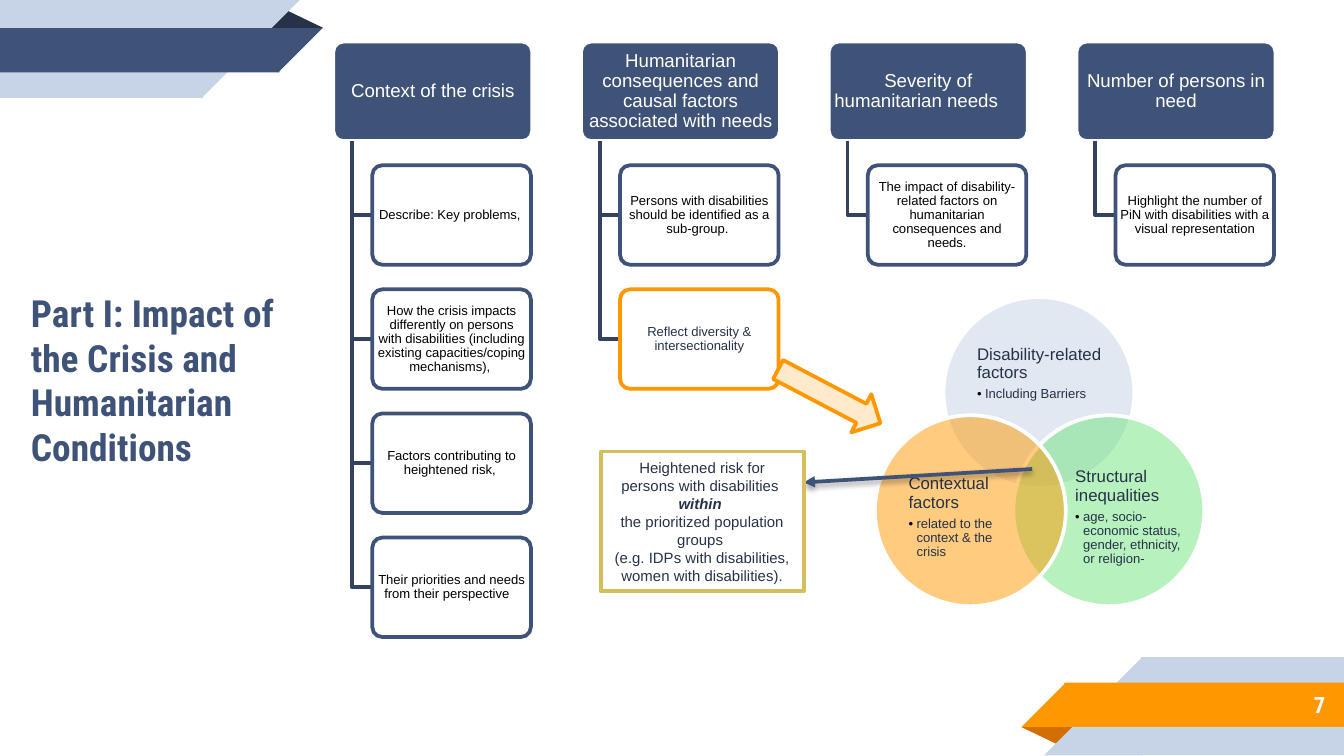
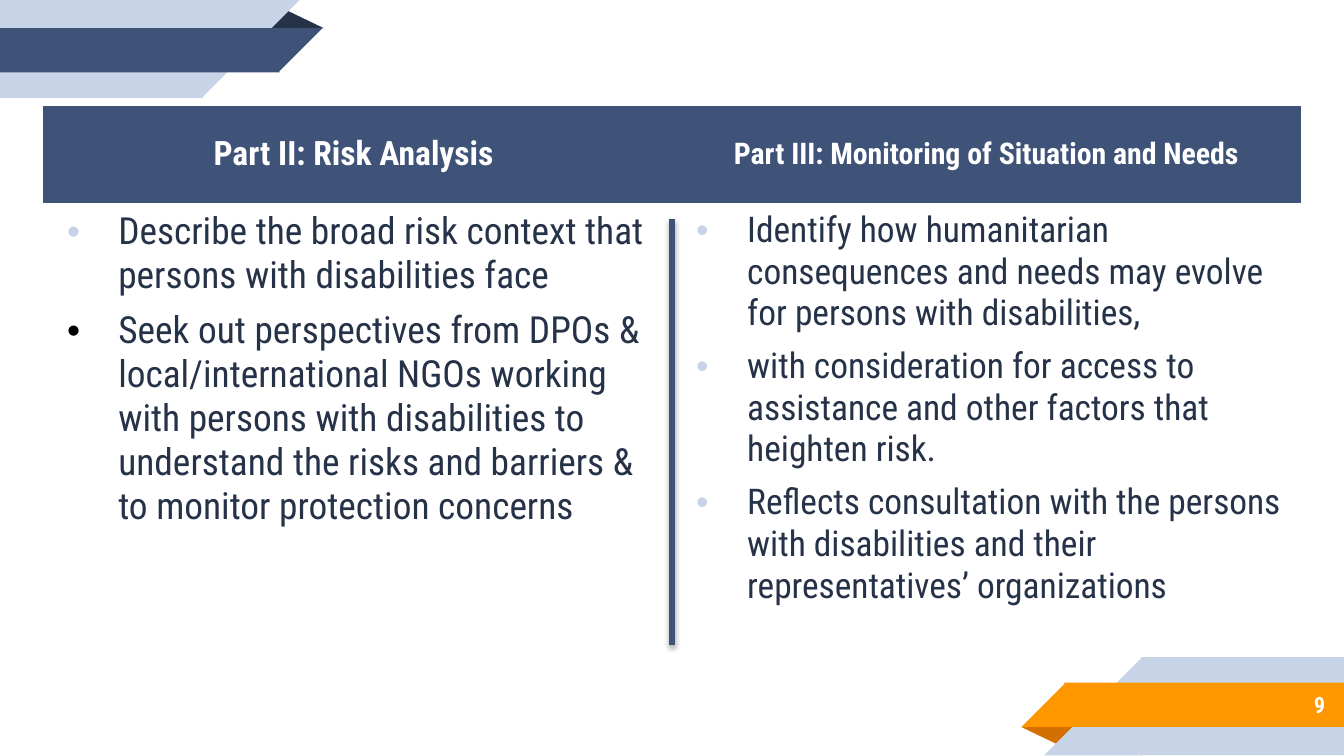
import lxml.etree
import pptx
import pptx.dml.color
import pptx.enum.shapes
import pptx.enum.text
import pptx.oxml.ns
import pptx.util

Inches = pptx.util.Inches
Pt = pptx.util.Pt
qn = pptx.oxml.ns.qn
SHAPE = pptx.enum.shapes.MSO_SHAPE
ALIGN = pptx.enum.text.PP_ALIGN
ANCHOR = pptx.enum.text.MSO_ANCHOR

NAVY, INK, LINK = "3F5378", "263248", "324260"
PALE, ORANGE, RUST = "C7D3E6", "FF9800", "D26F00"
WHITE, BLACK = "FFFFFF", "000000"
HEAD, BODY = "Roboto Condensed", "Arial"
PLAIN_TABLE = "{2D5ABB26-0587-4C30-8999-92F81FD0307C}"
TITLE_ONLY, BLANK = 5, 6


def rgb(color):
    return pptx.dml.color.RGBColor.from_string(color)


def add(parent, tag, **attrs):
    return lxml.etree.SubElement(parent, qn(tag), attrs)


class Deck:
    def __init__(self):
        self.prs = pptx.Presentation()
        self.prs.slide_width = Inches(10)
        self.prs.slide_height = Inches(10 * 9 / 16)
        self.s = None

    def slide(self, layout, number):
        self.s = self.prs.slides.add_slide(self.prs.slide_layouts[layout])
        self.shape(SHAPE.ISOSCELES_TRIANGLE, 1.98, 0.07, 0.43, 0.14, INK, adj=0.324)
        self.ribbon(0, 1.5, 0.73, PALE)
        self.ribbon(0.21, 2.07, 0.33, NAVY)
        sp = self.shape(SHAPE.ISOSCELES_TRIANGLE, 7.6, 5.41, 0.43, 0.14, RUST, adj=0.324)
        sp.rotation = 180
        self.ribbon(4.89, 1.5, 0.73, PALE, right=True)
        self.ribbon(5.08, 2.07, 0.33, ORANGE, right=True)
        tf = self.text(8.33, 5.07, 1.63, 0.35, 0.1)
        self.para(tf, number, 12, WHITE, HEAD, bold=True, align=ALIGN.RIGHT)

    def ribbon(self, y, w, h, color, right=False):
        overlap = 0.01
        self.shape(SHAPE.RECTANGLE, 10 - w - overlap if right else 0, y, w + overlap, h, color)
        sp = self.shape(SHAPE.RIGHT_TRIANGLE, 10 - w - h if right else w, y, h, h, color)
        sp.element.spPr.xfrm.set("flipH" if right else "flipV", "1")

    def paint(self, sp, fill=None, line=None, width=2, alpha=None):
        sp.shadow.inherit = False
        if fill:
            sp.fill.solid()
            sp.fill.fore_color.rgb = rgb(fill)
            if alpha:
                clr = sp.element.spPr.find(".//" + qn("a:srgbClr"))
                add(clr, "a:alpha", val=str(alpha * 1000))
        else:
            sp.fill.background()
        if line:
            sp.line.color.rgb = rgb(line)
            sp.line.width = Pt(width)
        else:
            sp.line.fill.background()

    def shape(self, kind, x, y, w, h, fill=None, line=None, alpha=None, adj=None):
        sp = self.s.shapes.add_shape(kind, Inches(x), Inches(y), Inches(w), Inches(h))
        if adj is not None:
            sp.adjustments[0] = adj
        self.paint(sp, fill, line, alpha=alpha)
        return sp

    def frame(self, tf, inset_x, inset_y):
        tf.word_wrap = True
        tf.auto_size = pptx.enum.text.MSO_AUTO_SIZE.NONE
        tf.vertical_anchor = ANCHOR.MIDDLE
        tf.margin_left = tf.margin_right = Inches(inset_x)
        tf.margin_top = tf.margin_bottom = Inches(inset_y)
        return tf

    def text(self, x, y, w, h, inset=0.0):
        sp = self.s.shapes.add_textbox(Inches(x), Inches(y), Inches(w), Inches(h))
        return self.frame(sp.text_frame, inset, inset)

    def title(self, text, x, y, w, h):
        sp = self.s.shapes.title
        sp.left, sp.top, sp.width, sp.height = map(Inches, (x, y, w, h))
        self.para(self.frame(sp.text_frame, 0.1, 0.1), text, 20, NAVY, HEAD, bold=True)

    def para(self, tf, text, size, color, font=BODY, bold=False, italic=False,
             align=ALIGN.LEFT, spacing=None, before=0, after=0, bullet=None,
             indent=0.0, hang=0.0):
        p = tf.add_paragraph() if tf.paragraphs[0].runs else tf.paragraphs[0]
        p.alignment = align
        p.space_before, p.space_after = Pt(before), Pt(after)
        if spacing:
            p.line_spacing = spacing
        if bullet:
            pr = p._p.get_or_add_pPr()
            pr.set("marL", str(Inches(indent)))
            pr.set("indent", str(-Inches(hang)))
            add(add(pr, "a:buClr"), "a:srgbClr", val=bullet)
            add(pr, "a:buFont", typeface=BODY)
            add(pr, "a:buChar", char="•")
        r = p.add_run()
        r.text = text
        r.font.name, r.font.size = font, Pt(size)
        r.font.bold, r.font.italic = bold, italic
        r.font.color.rgb = rgb(color)

    def box(self, text, x, y, w, h, size, color, fill, line, alpha=None):
        sp = self.shape(SHAPE.ROUNDED_RECTANGLE, x, y, w, h, fill, line, alpha, 0.1)
        tf = self.frame(sp.text_frame, 0.02 if size > 7 else 0.01, 0.01)
        self.para(tf, text, size, color, align=ALIGN.CENTER, spacing=0.9)

    def elbow(self, x, y, x2, y2):
        fb = self.s.shapes.build_freeform(Inches(x), Inches(y))
        fb.add_line_segments([(Inches(x), Inches(y2)), (Inches(x2), Inches(y2))], close=False)
        self.paint(fb.convert_to_shape(), line=LINK)

    def circle(self, x, y, fill, heading, detail, label):
        self.shape(SHAPE.OVAL, x, y, 1.42, 1.42, fill, WHITE, 50)
        tf = self.text(*label)
        self.para(tf, heading, 9, INK, spacing=0.9, after=3)
        self.para(tf, detail, 7, INK, spacing=0.9, bullet=BLACK, indent=0.06, hang=0.06)

    def line(self, x, y, x2, y2, width, arrow=False):
        cn = self.s.shapes.add_connector(pptx.enum.shapes.MSO_CONNECTOR.STRAIGHT,
                                         Inches(x), Inches(y), Inches(x2), Inches(y2))
        cn.line.color.rgb = rgb(NAVY)
        cn.line.width = Pt(width)
        pr = cn.element.spPr
        if arrow:
            add(pr.find(qn("a:ln")), "a:tailEnd", type="triangle")
        shadow = add(add(pr, "a:effectLst"), "a:outerShdw", blurRad=str(Pt(3.1)),
                     dist=str(Pt(1.7)), dir="5400000", rotWithShape="0")
        add(add(shadow, "a:srgbClr", val=BLACK), "a:alpha", val="37000")

    def table(self, x, y, widths, heights):
        gf = self.s.shapes.add_table(len(heights), len(widths), Inches(x), Inches(y),
                                     Inches(sum(widths)), Inches(sum(heights)))
        tbl = gf.table
        tbl.first_row = tbl.horz_banding = False
        gf.element.find(".//" + qn("a:tableStyleId")).text = PLAIN_TABLE
        for col, w in zip(tbl.columns, widths):
            col.width = Inches(w)
        for row, h in zip(tbl.rows, heights):
            row.height = Inches(h)
        return tbl


COLUMNS = [
    ("Context of the crisis", [
        "Describe: Key problems, ",
        "How the crisis impacts differently on persons with disabilities "
        "(including existing capacities/coping mechanisms), ",
        "Factors contributing to heightened risk, ",
        "Their priorities and needs from their perspective	"]),
    ("Humanitarian consequences and causal factors associated with needs", [
        "Persons with disabilities should be identified as a sub-group. ",
        "Reflect diversity & intersectionality"]),
    ("Severity of humanitarian needs 	", [
        "The impact of disability-related factors on humanitarian consequences and needs."]),
    ("Number of persons in need", [
        "Highlight the number of PiN with disabilities with a visual representation"]),
]
CIRCLES = [
    (7.02, 2.21, PALE, "Disability-related factors", "Including Barriers",
     (7.27, 2.46, 1.04, 0.64)),
    (7.54, 3.09, "71E57D", "Structural inequalities",
     "age, socio-economic status, gender, ethnicity, or religion-", (8, 3.46, 0.85, 0.78)),
    (6.51, 3.09, ORANGE, "Contextual factors", "related to the context & the crisis",
     (6.76, 3.46, 0.85, 0.78)),
]
PARTS = [
    ("Part II: Risk Analysis ", 18, 20, [
        ("Describe the broad risk context that persons with disabilities face", PALE),
        ("Seek out perspectives from DPOs & local/international NGOs working with persons "
         "with disabilities to understand the risks and barriers & to monitor "
         "protection concerns", BLACK)]),
    ("Part III: Monitoring of Situation and Needs", 16, 19, [
        ("Identify how humanitarian consequences and needs may evolve for persons "
         "with disabilities, ", PALE),
        ("with consideration for access to assistance and other factors that "
         "heighten risk.", PALE),
        ("Reflects consultation with the persons with disabilities and their "
         "representatives’ organizations", PALE)]),
]


def impact_slide(deck):
    deck.slide(TITLE_ONLY, "7")
    deck.title("Part I: Impact of the Crisis and Humanitarian Conditions", 0.13, 1.83, 2.02, 1.99)
    column_pitch = (8.01 - 2.48) / 3
    row_pitch = (4 - 1.23) / 3
    for i, (heading, items) in enumerate(COLUMNS):
        x = 2.48 + column_pitch * i
        deck.box(heading, x, 0.31, 1.48, 0.74, 10, WHITE, NAVY, WHITE)
        for j, item in enumerate(items):
            y = 1.23 + row_pitch * j
            deck.elbow(x + 0.14, 1.05, x + 0.29, y + 0.37)
            if item.startswith("Reflect"):
                deck.box(item, x + 0.29, y, 1.18, 0.74, 7, INK, WHITE, ORANGE)
            else:
                deck.box(item, x + 0.29, y, 1.18, 0.74, 7, BLACK, WHITE, NAVY, 90)
    for circle in CIRCLES:
        deck.circle(*circle)
    deck.line(7.68, 3.49, 5.98, 3.59, 2, arrow=True)
    sp = deck.shape(SHAPE.RECTANGLE, 4.47, 3.36, 1.51, 1.04, line="D5BF5C")
    tf = deck.frame(sp.text_frame, 0.1, 0.05)
    for text, strong in [("Heightened risk for persons with disabilities ", False),
                         ("within ", True),
                         ("the prioritized population groups ", False),
                         ("(e.g. IDPs with disabilities, women with disabilities).", False)]:
        deck.para(tf, text, 8, INK, bold=strong, italic=strong, align=ALIGN.CENTER)
    sp = deck.shape(SHAPE.RIGHT_ARROW, 5.74, 2.79, 0.86, 0.32, "FFEACC", ORANGE)
    sp.rotation = 27.7


def parts_slide(deck):
    deck.slide(BLANK, "9")
    tbl = deck.table(0.32, 0.79, [4.68, 4.68], [0.72, 3.35])
    for i, (heading, head_size, size, items) in enumerate(PARTS):
        cell = tbl.cell(0, i)
        cell.fill.solid()
        cell.fill.fore_color.rgb = rgb(NAVY)
        cell.vertical_anchor = ANCHOR.MIDDLE
        deck.para(cell.text_frame, heading, head_size, WHITE, HEAD, bold=True, align=ALIGN.CENTER)
        cell = tbl.cell(1, i)
        cell.fill.background()
        for text, bullet in items:
            deck.para(cell.text_frame, text, size, INK, HEAD, before=6,
                      bullet=bullet, indent=0.46, hang=0.38)
    deck.line(5, 1.63, 5, 4.8, 3)


def main():
    deck = Deck()
    impact_slide(deck)
    parts_slide(deck)
    deck.prs.save("out.pptx")


if __name__ == "__main__":
    main()
